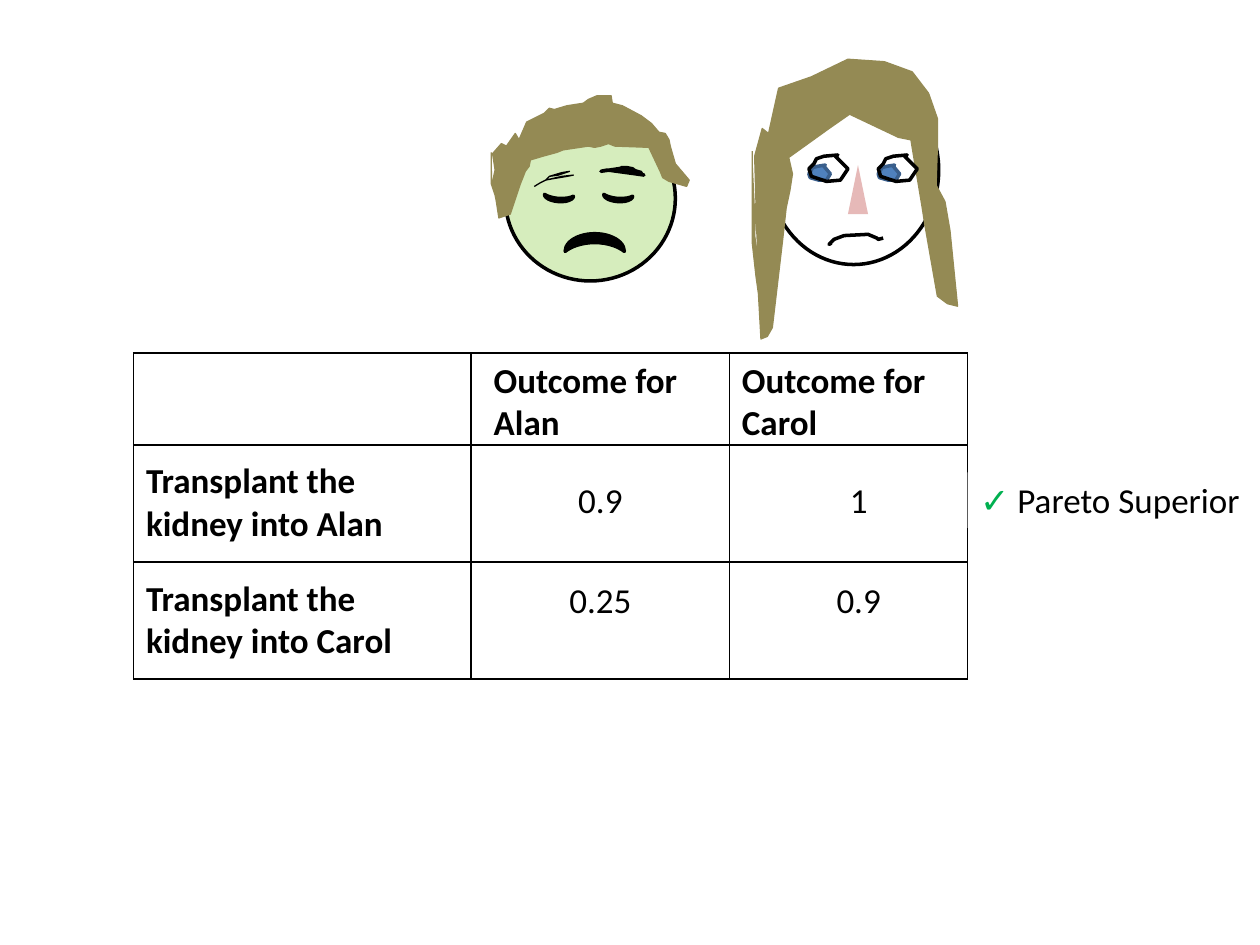
from lxml import etree
from pptx import Presentation
from pptx import util as u
from pptx.dml.color import RGBColor
from pptx.enum import shapes, text
from pptx.oxml import ns

BLACK, WHITE, HAIR, GREEN = "000000", "FFFFFF", "948A54", "00B050"
SKIN, NOSE, IRIS, IRIS_EDGE = "D6EDBD", "E6B9B8", "4F81BD", "3A5F8C"
KIND = shapes.MSO_SHAPE
ALIGN = text.PP_ALIGN
UNIT = 100  # drawing units to the inch

# Outlines, in hundredths of an inch from the corner of their own box
SHORT_HAIR = [
    (3, 48), (3, 73), (6, 82), (7, 87), (9, 100), (18, 97), (26, 73), (30, 63),
    (33, 59), (34, 54), (44, 51), (55, 48), (60, 46), (80, 43), (85, 44), (90, 43),
    (96, 41), (101, 43), (128, 44), (137, 63), (139, 68), (144, 71), (158, 75),
    (160, 70), (149, 57), (145, 43), (144, 38), (141, 33), (136, 32), (130, 25),
    (122, 19), (107, 11), (99, 9), (98, 3), (87, 3), (80, 6), (76, 9), (63, 11),
    (53, 14), (49, 13), (45, 17), (41, 19), (31, 24), (25, 38), (22, 33), (15, 43),
    (11, 41), (4, 49), (6, 62), (4, 71), (4, 76)]
THIN_BROW = [
    (37, 75), (42, 72), (46, 70), (59, 67), (68, 66), (63, 67), (51, 69), (46, 70),
    (49, 67), (59, 64), (65, 63), (56, 66), (49, 67)]
THICK_BROW = [
    (97, 62), (90, 63), (95, 62), (117, 65), (124, 66), (119, 64), (115, 61),
    (110, 60), (106, 60), (117, 63), (122, 64), (115, 62), (110, 60)]
LONG_HAIR = [
    (2, 76), (2, 148), (5, 175), (7, 189), (9, 225), (14, 223), (18, 216), (26, 148),
    (29, 121), (32, 107), (34, 94), (31, 81), (63, 58), (86, 42), (78, 46), (118, 65),
    (128, 67), (137, 121), (139, 134), (149, 191), (157, 197), (165, 199), (159, 139),
    (155, 116), (148, 103), (149, 73), (149, 50), (142, 30), (129, 13), (107, 5),
    (78, 3), (49, 17), (23, 26), (21, 35), (15, 62), (10, 58), (4, 80), (5, 116),
    (4, 143), (6, 157)]
IRIS_EDGES = [
    (13, 8), (7, 9), (3, 10), (2, 12), (0, 15), (1, 18), (8, 20), (14, 20), (17, 15),
    (12, 9)]
EYE_EDGES = [
    (23, 0), (12, 1), (6, 3), (4, 7), (0, 11), (2, 17), (14, 21), (25, 20), (31, 11),
    (21, 1)]
FROWN = [
    (65, 149), (63, 150), (67, 146), (75, 143), (94, 142), (101, 145), (102, 146),
    (106, 145)]


def color(value):
    return RGBColor.from_string(value)


def paint(part, fill=None, line=None, weight=2):
    part.shadow.inherit = False
    if fill:
        part.fill.solid()
        part.fill.fore_color.rgb = color(fill)
    else:
        part.fill.background()
    if line:
        part.line.color.rgb = color(line)
        part.line.width = u.Pt(weight)
    else:
        part.line.fill.background()
    return part


def preset(slide, kind, corner, box, rotation=0, **look):
    """Place a preset shape whose box is relative to the corner."""
    left, top, width, height = box
    part = slide.shapes.add_shape(
        kind, *map(u.Inches, (corner[0] + left, corner[1] + top, width, height)))
    part.rotation = rotation
    return paint(part, **look)


def outline(slide, points, corner, closed=False, **look):
    pen = slide.shapes.build_freeform(*points[0], scale=u.Inches(1) / UNIT)
    pen.add_line_segments(points[1:], close=closed)
    return paint(pen.convert_to_shape(*map(u.Inches, corner)), **look)


def write(frame, pieces, align=ALIGN.LEFT, bold=False):
    """Fill a text frame or cell frame with (words, colour) pieces."""
    frame.word_wrap = True
    paragraph = frame.paragraphs[0]
    paragraph.alignment = align
    for words, ink in pieces:
        run = paragraph.add_run()
        run.text = words
        for key, value in {"name": "Calibri", "size": u.Pt(20), "bold": bold}.items():
            setattr(run.font, key, value)
        run.font.color.rgb = color(ink)


def label(slide, words, box, **format_values):
    frame = slide.shapes.add_textbox(*map(u.Inches, box)).text_frame
    write(frame, [(words, BLACK)], **format_values)


def alan(slide, corner):
    preset(slide, KIND.OVAL, corner, (0.14, 0.19, 1.35, 1.31), fill=SKIN, line=BLACK)
    ink = {"fill": BLACK, "line": BLACK}
    for eye_left in (0.54, 1.01):
        preset(slide, KIND.MOON, corner, (eye_left, 0.73, 0.05, 0.23), 273.8, **ink)
    preset(slide, KIND.MOON, corner, (0.78, 0.96, 0.14, 0.47), 90, **ink)
    outline(slide, THIN_BROW, corner, line=BLACK, weight=0.75)
    outline(slide, THICK_BROW, corner, closed=True, **ink)
    outline(slide, SHORT_HAIR, corner, fill=HAIR, line=HAIR, weight=0.75)


def carol(slide, corner):
    preset(slide, KIND.OVAL, corner, (0.15, 0.16, 1.35, 1.5), line=BLACK)
    outline(slide, LONG_HAIR, corner, fill=HAIR, line=HAIR, weight=0.75)
    for eye_left in (0.47, 1.02):
        eye = (corner[0] + eye_left, corner[1] + 0.79)
        outline(slide, IRIS_EDGES, eye, closed=True, fill=IRIS, line=IRIS_EDGE)
        outline(slide, EYE_EDGES, eye, closed=True, line=BLACK)
    outline(slide, FROWN, corner, line=BLACK)
    preset(slide, KIND.ISOSCELES_TRIANGLE, corner, (0.78, 0.87, 0.16, 0.39), fill=NOSE)


def border(cell):
    properties = cell._tc.get_or_add_tcPr()
    for place, side in enumerate(("a:lnL", "a:lnR", "a:lnT", "a:lnB")):
        edge = etree.Element(ns.qn(side), w=str(u.Pt(1)))
        fill = etree.SubElement(edge, ns.qn("a:solidFill"))
        etree.SubElement(fill, ns.qn("a:srgbClr"), val=BLACK)
        properties.insert(place, edge)


def outcomes(slide, left, top):
    widths, heights = (2.68, 2.05, 1.89), (0.73, 0.93, 0.93)
    grid = slide.shapes.add_table(
        3, 3, *map(u.Inches, (left, top, sum(widths), sum(heights)))).table
    grid.first_row = grid.horz_banding = False
    for column, width in zip(grid.columns, widths):
        column.width = u.Inches(width)
    for row, height in zip(grid.rows, heights):
        row.height = u.Inches(height)
    for cell in grid.iter_cells():
        cell.fill.background()
        border(cell)
    for row, name in enumerate(("Alan", "Carol"), 1):
        cell = grid.cell(row, 0)
        cell.vertical_anchor = text.MSO_ANCHOR.MIDDLE
        write(cell.text_frame, [(f"Transplant the kidney into {name}", BLACK)], bold=True)

    column_lefts = (left + widths[0], left + widths[0] + widths[1])
    for name, column_left, inset in zip(("Alan", "Carol"), column_lefts, (0.08, 0)):
        label(slide, f"Outcome for {name}", (column_left + inset, top, 2.05, 0.77), bold=True)
    for values, drop in ((("0.9", "1"), 0.95), (("0.25", "0.9"), 1.74)):
        for value, column_left in zip(values, column_lefts):
            label(slide, value, (column_left, top + drop, 2.05, 0.44), align=ALIGN.CENTER)


def verdict(slide, box):
    note = preset(slide, KIND.RECTANGLE, (0, 0), box, fill=WHITE)
    note.text_frame.vertical_anchor = text.MSO_ANCHOR.TOP
    write(note.text_frame, [("✓", GREEN), (" Pareto Superior", BLACK)])


def main():
    deck = Presentation()
    deck.slide_width, deck.slide_height = u.Inches(10), u.Inches(7.5)
    slide = deck.slides.add_slide(deck.slide_layouts[6])
    alan(slide, (3.87, 0.73))
    outcomes(slide, 1.06, 2.8)
    carol(slide, (5.95, 0.44))
    verdict(slide, (7.68, 3.75, 2.32, 0.44))
    deck.save("out.pptx")


if __name__ == "__main__":
    main()
